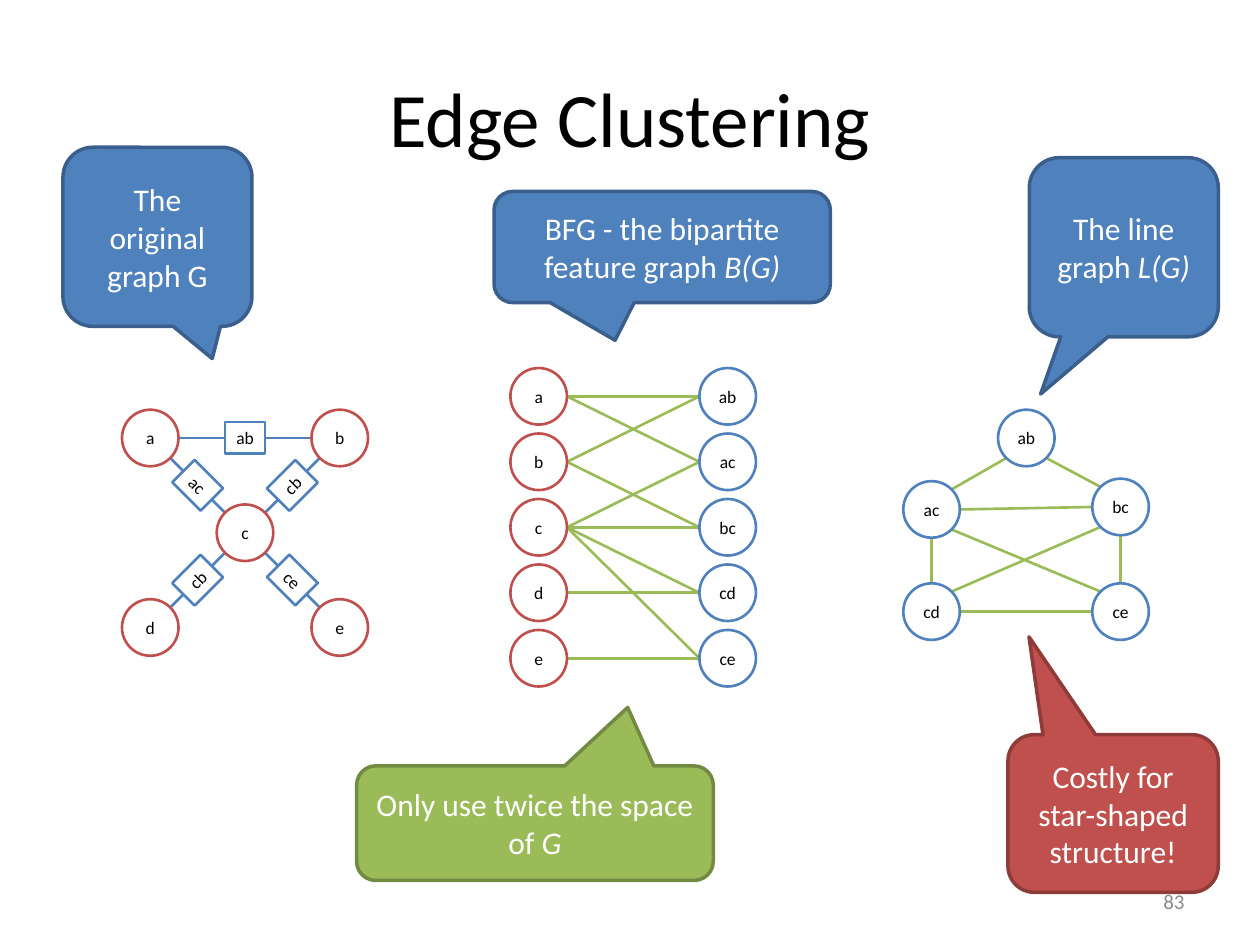
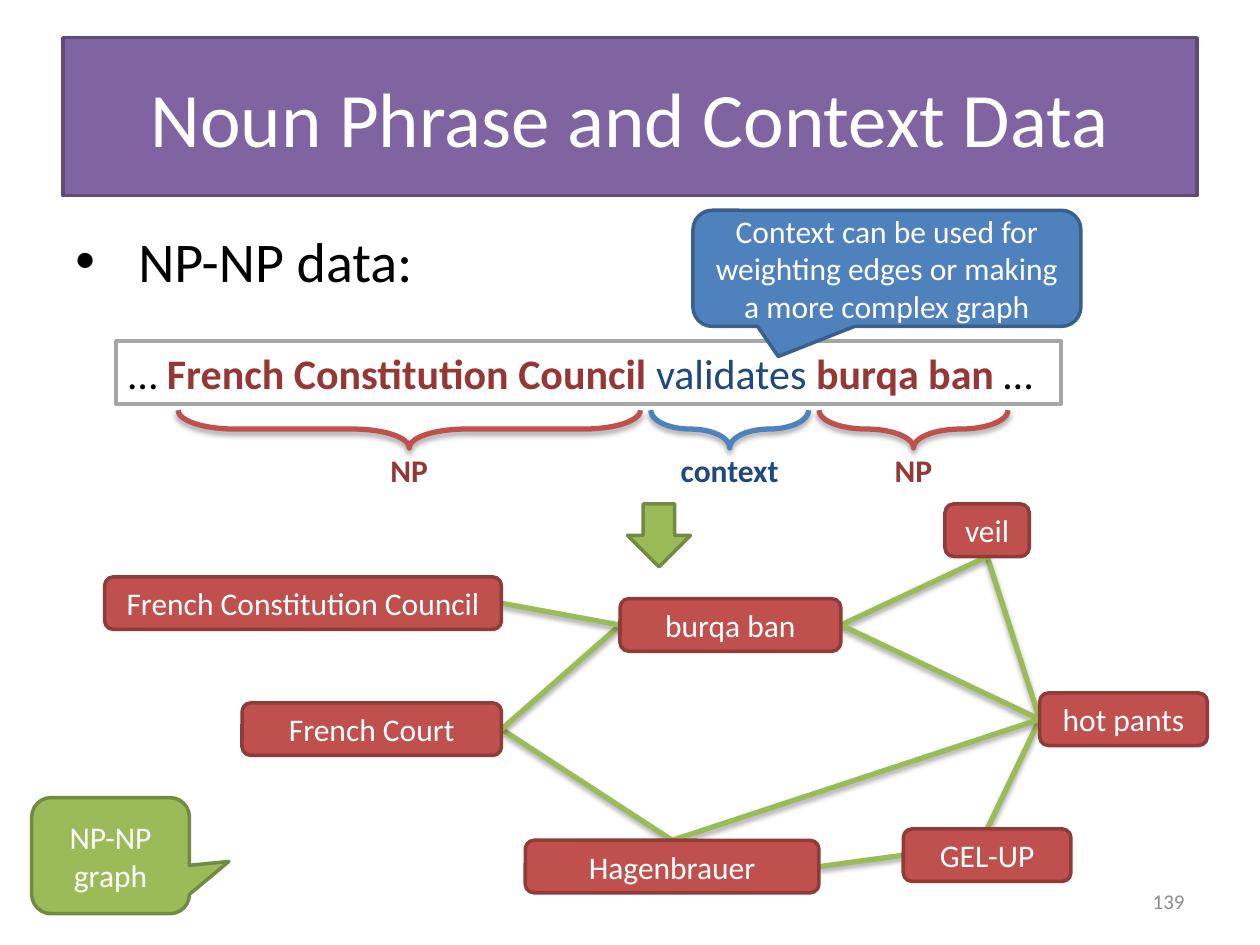
import math

from pptx import Presentation
from pptx import util as u
from pptx.dml.color import RGBColor
from pptx.enum import shapes, text
from pptx.oxml.ns import qn
from lxml import etree

COLORS = {
    "black": "000000", "white": "FFFFFF", "number": "8C8C8C", "frame": "A6A6A6",
    "blue": "4F81BD", "blue_edge": "3A5F8C", "navy": "1F497D",
    "red": "C0504D", "red_edge": "8E3B39", "maroon": "953735",
    "green": "9BBB59", "green_edge": "738A42",
    "purple": "8064A2", "purple_edge": "5F4A78",
}
FONT = "Calibri"
RADIUS = 0.57
TAG_WIDTH, TAG_HEIGHT = 0.81, 0.64
RIGHT, DOWN_RIGHT, DOWN, DOWN_LEFT, LEFT, UP_LEFT, UP, UP_RIGHT = range(0, 360, 45)
SIDE_TOP, SIDE_LEFT, SIDE_BOTTOM, SIDE_RIGHT = range(4)
KIND = shapes.MSO_SHAPE
ALIGN = text.PP_ALIGN
ANCHOR = text.MSO_ANCHOR


def color(name):
    return RGBColor.from_string(COLORS[name])


def write(frame, content, size=18, ink="white", bold=False, align=ALIGN.CENTER,
          anchor=ANCHOR.MIDDLE, inset=None):
    frame.word_wrap = True
    frame.vertical_anchor = anchor
    if inset is not None:
        frame.margin_left = frame.margin_right = u.Cm(inset)
        frame.margin_top = frame.margin_bottom = u.Cm(inset)
    if isinstance(content, str):
        paragraphs = [[(row, {})] for row in content.split("\n")]
    else:
        paragraphs = [content]
    for index, spans in enumerate(paragraphs):
        para = frame.add_paragraph() if index else frame.paragraphs[0]
        para.alignment = align
        for words, changes in spans:
            span = para.add_run()
            span.text = words
            span.font.name = FONT
            span.font.size = u.Pt(size)
            span.font.bold = changes.get("bold", bold)
            span.font.italic = changes.get("italic", False)
            span.font.color.rgb = color(changes.get("ink", ink))


def paint(shape, fill, edge, weight):
    if fill:
        shape.fill.solid()
        shape.fill.fore_color.rgb = color(fill)
    else:
        shape.fill.background()
    shape.line.color.rgb = color(edge)
    shape.line.width = u.Pt(weight)


def cast_shadow(effects):
    shadow = etree.SubElement(effects, qn("a:outerShdw"), blurRad="40000", dist="23000",
                              dir="5400000", rotWithShape="0")
    tint = etree.SubElement(shadow, qn("a:srgbClr"), val=COLORS["black"])
    etree.SubElement(tint, qn("a:alpha"), val="35000")


def add_box(page, kind, place, fill, edge, weight=2, adjust=()):
    box = page.shapes.add_shape(kind, *map(u.Cm, place))
    box.shadow.inherit = False
    paint(box, fill, edge, weight)
    for index, value in enumerate(adjust):
        box.adjustments[index] = value
    return box


def add_callout(page, place, tip, fill, content):
    box = add_box(page, KIND.ROUNDED_RECTANGULAR_CALLOUT, place, fill, fill + "_edge",
                  adjust=(*tip, 0.167))
    write(box.text_frame, content)


def add_label(page, place, content, **style):
    box = page.shapes.add_textbox(*map(u.Cm, place))
    write(box.text_frame, content, **style)
    return box


def add_line(page, start, end, ink, weight=1.5, shaded=False):
    line = page.shapes.add_connector(shapes.MSO_CONNECTOR.STRAIGHT,
                                     *map(u.Cm, (*start, *end)))
    line.line.color.rgb = color(ink)
    line.line.width = u.Pt(weight)
    effects = etree.SubElement(line._element.spPr, qn("a:effectLst"))
    if shaded:
        cast_shadow(effects)
    return line


def add_node(page, center, content, edge):
    x, y = center
    node = add_box(page, KIND.OVAL, (x - RADIUS, y - RADIUS, 2 * RADIUS, 2 * RADIUS),
                   None, edge, 1.5)
    write(node.text_frame, content, size=10, ink="black", inset=0)


def add_tag(page, center, content, turn):
    x, y = center
    place = (x - TAG_WIDTH / 2, y - TAG_HEIGHT / 2, TAG_WIDTH, TAG_HEIGHT)
    tag = add_box(page, KIND.RECTANGLE, place, None, "blue", 1.5)
    tag.rotation = turn
    write(tag.text_frame, content, size=10, ink="black", inset=0)


def rim(center, degrees, distance=RADIUS):
    angle = math.radians(degrees)
    return (center[0] + distance * math.cos(angle), center[1] + distance * math.sin(angle))


def add_brace(page, left, span, edge, caption, ink):
    top, depth = 8.27, 0.76
    middle = left + span / 2
    place = (middle - depth / 2, top + depth / 2 - span / 2, depth, span)
    brace = add_box(page, KIND.RIGHT_BRACE, place, None, edge, 3, (1.5, 0.5))
    brace.rotation = 90
    cast_shadow(brace._element.spPr.find(qn("a:effectLst")))
    add_label(page, (middle - 1.4, 8.97, 2.8, 1.02), caption, ink=ink, bold=True,
              anchor=ANCHOR.TOP)


def add_page(deck, heading, ink="black"):
    page = deck.slides.add_slide(deck.slide_layouts[5])
    title = page.shapes.title
    title.left, title.top, title.width, title.height = map(u.Cm, (1.27, 0.76, 22.86, 3.18))
    write(title.text_frame, heading, size=44, ink=ink)
    return page


def add_number(page, number):
    add_label(page, (18.21, 17.65, 5.92, 1.02), number, size=12, ink="number",
              align=ALIGN.RIGHT)


def draw_source_graph(page):
    x, y, step = 4.94, 10.74, 1.91
    centers = {"a": (x - step, y - step), "b": (x + step, y - step), "c": (x, y),
               "d": (x - step, y + step), "e": (x + step, y + step)}
    edges = [("a", "b", "ab", RIGHT, 0), ("a", "c", "ac", DOWN_RIGHT, 45),
             ("b", "c", "cb", DOWN_LEFT, 315), ("c", "d", "cb", DOWN_LEFT, 315),
             ("c", "e", "ce", DOWN_RIGHT, 45)]
    for first, second, name, heading, turn in edges:
        start, end = centers[first], centers[second]
        middle = ((start[0] + end[0]) / 2, (start[1] + end[1]) / 2)
        back = heading + 180
        add_line(page, rim(start, heading), rim(middle, back, TAG_WIDTH / 2), "blue")
        add_line(page, rim(middle, heading, TAG_WIDTH / 2), rim(end, back), "blue")
        add_tag(page, middle, name, turn)
    for name, center in centers.items():
        add_node(page, center, name, "red")


def draw_bipartite_graph(page):
    top, step = 7.99, 1.32
    vertices = {name: (10.86, top + step * row) for row, name in enumerate("abcde")}
    features = {name: (14.67, top + step * row)
                for row, name in enumerate(("ab", "ac", "bc", "cd", "ce"))}
    links = [("a", "ab"), ("a", "ac"), ("b", "ab"), ("b", "bc"), ("c", "ac"),
             ("c", "bc"), ("c", "cd"), ("c", "ce"), ("d", "cd"), ("e", "ce")]
    for vertex, feature in links:
        add_line(page, rim(vertices[vertex], RIGHT), rim(features[feature], LEFT), "green")
    for group, edge in ((vertices, "red"), (features, "blue")):
        for name, center in group.items():
            add_node(page, center, name, edge)


def draw_line_graph(page):
    centers = {"ab": (20.69, 8.83), "ac": (18.78, 10.27), "bc": (22.59, 10.22),
               "cd": (18.78, 12.33), "ce": (22.59, 12.33)}
    links = [("ac", DOWN, "cd", UP), ("bc", DOWN, "ce", UP),
             ("ac", RIGHT, "bc", LEFT), ("cd", RIGHT, "ce", LEFT),
             ("ac", DOWN_RIGHT, "ce", UP_LEFT), ("bc", DOWN_LEFT, "cd", UP_RIGHT),
             ("ab", DOWN_LEFT, "ac", UP_RIGHT), ("ab", DOWN_RIGHT, "bc", UP_LEFT)]
    for first, leave, second, arrive in links:
        add_line(page, rim(centers[first], leave), rim(centers[second], arrive), "green")
    for name, center in centers.items():
        add_node(page, center, name, "blue")


def draw_phrase_graph(page):
    places = {"French Constitution Council": (2.11, 11.63, 8),
              "French Court": (4.88, 14.17, 5.23),
              "burqa ban": (12.5, 12.07, 4.45),
              "veil": (19.05, 10.16, 1.7),
              "hot pants": (20.96, 13.97, 3.38),
              "Hagenbrauer": (10.59, 16.94, 5.92),
              "GEL-UP": (18.21, 16.71, 3.38)}
    links = [("French Constitution Council", SIDE_RIGHT, "burqa ban", SIDE_LEFT),
             ("French Court", SIDE_RIGHT, "burqa ban", SIDE_LEFT),
             ("French Court", SIDE_RIGHT, "Hagenbrauer", SIDE_TOP),
             ("Hagenbrauer", SIDE_RIGHT, "GEL-UP", SIDE_LEFT),
             ("Hagenbrauer", SIDE_TOP, "hot pants", SIDE_LEFT),
             ("GEL-UP", SIDE_TOP, "hot pants", SIDE_LEFT),
             ("burqa ban", SIDE_RIGHT, "hot pants", SIDE_LEFT),
             ("burqa ban", SIDE_RIGHT, "veil", SIDE_BOTTOM),
             ("hot pants", SIDE_LEFT, "veil", SIDE_BOTTOM)]
    boxes = {}
    for phrase, place in places.items():
        boxes[phrase] = add_box(page, KIND.ROUNDED_RECTANGLE, (*place, 1.06),
                                "red", "red_edge")
        write(boxes[phrase].text_frame, phrase)
    for first, leave, second, arrive in links:
        line = add_line(page, (0, 0), (1, 1), "green", 3, shaded=True)
        line.begin_connect(boxes[first], leave)
        line.end_connect(boxes[second], arrive)
        line._element.getparent().insert(2, line._element)


def add_bullet(page, content):
    box = add_label(page, (1.27, 4.45, 22.86, 1.9), content, size=32, ink="black",
                    align=ALIGN.LEFT, anchor=ANCHOR.TOP)
    para = box.text_frame.paragraphs[0]
    para.space_before = u.Pt(6.4)
    settings = para._p.get_or_add_pPr()
    settings.set("marL", str(u.Cm(1.27)))
    settings.set("indent", str(u.Cm(-1.27)))
    etree.SubElement(settings, qn("a:buFont"), typeface="Arial")
    etree.SubElement(settings, qn("a:buChar"), char="•")


def build_clustering(deck):
    page = add_page(deck, "Edge Clustering")
    italic = {"italic": True}
    add_callout(page, (1.27, 2.97, 3.81, 3.61), (0.29, 0.68), "blue", "The original graph G")
    add_callout(page, (20.75, 3.18, 3.81, 3.61), (-0.44, 0.82), "blue",
                [("The line graph ", {}), ("L(G)", italic)])
    add_callout(page, (9.96, 3.86, 6.78, 2.24), (-0.14, 0.84), "blue",
                [("BFG - the bipartite feature graph ", {}), ("B(G)", italic)])
    add_callout(page, (20.32, 14.81, 4.24, 3.18), (-0.4, -1.12), "red",
                "Costly for star-shaped structure!")
    add_callout(page, (7.19, 15.44, 7.19, 2.31), (0.26, -1.01), "green",
                [("Only use twice the space of ", {}), ("G", italic)])
    add_number(page, "83")
    draw_bipartite_graph(page)
    draw_line_graph(page)
    draw_source_graph(page)


def build_phrases(deck):
    page = add_page(deck, "Noun Phrase and Context Data", ink="white")
    paint(page.shapes.title, "purple", "purple_edge", 2)
    add_bullet(page, "NP-NP data:")
    add_number(page, "139")
    sentence = add_box(page, KIND.RECTANGLE, (2.34, 6.88, 19.05, 1.27), "white", "frame")
    phrase = {"ink": "maroon", "bold": True}
    write(sentence.text_frame,
          [("… ", {}), ("French Constitution Council ", phrase),
           ("validates ", {"ink": "navy"}), ("burqa ban ", phrase), ("…", {})],
          size=24, ink="black", align=ALIGN.LEFT, anchor=ANCHOR.TOP)
    add_brace(page, 3.59, 9.32, "red", "NP", "maroon")
    add_brace(page, 13.12, 3.18, "blue", "context", "navy")
    add_brace(page, 16.51, 3.81, "red", "NP", "maroon")
    add_box(page, KIND.DOWN_ARROW, (12.65, 10.16, 1.27, 1.27), "green", "green_edge")
    draw_phrase_graph(page)
    add_callout(page, (0.64, 16.08, 3.18, 2.34), (0.75, 0.05), "green", "NP-NP\ngraph")
    add_callout(page, (13.97, 4.24, 7.82, 2.34), (-0.28, 0.76), "blue",
                "Context can be used for weighting edges or making a more complex graph")


def main():
    deck = Presentation()
    deck.slide_width, deck.slide_height = u.Cm(25.4), u.Cm(19.05)
    build_clustering(deck)
    build_phrases(deck)
    deck.save("out.pptx")


if __name__ == "__main__":
    main()
